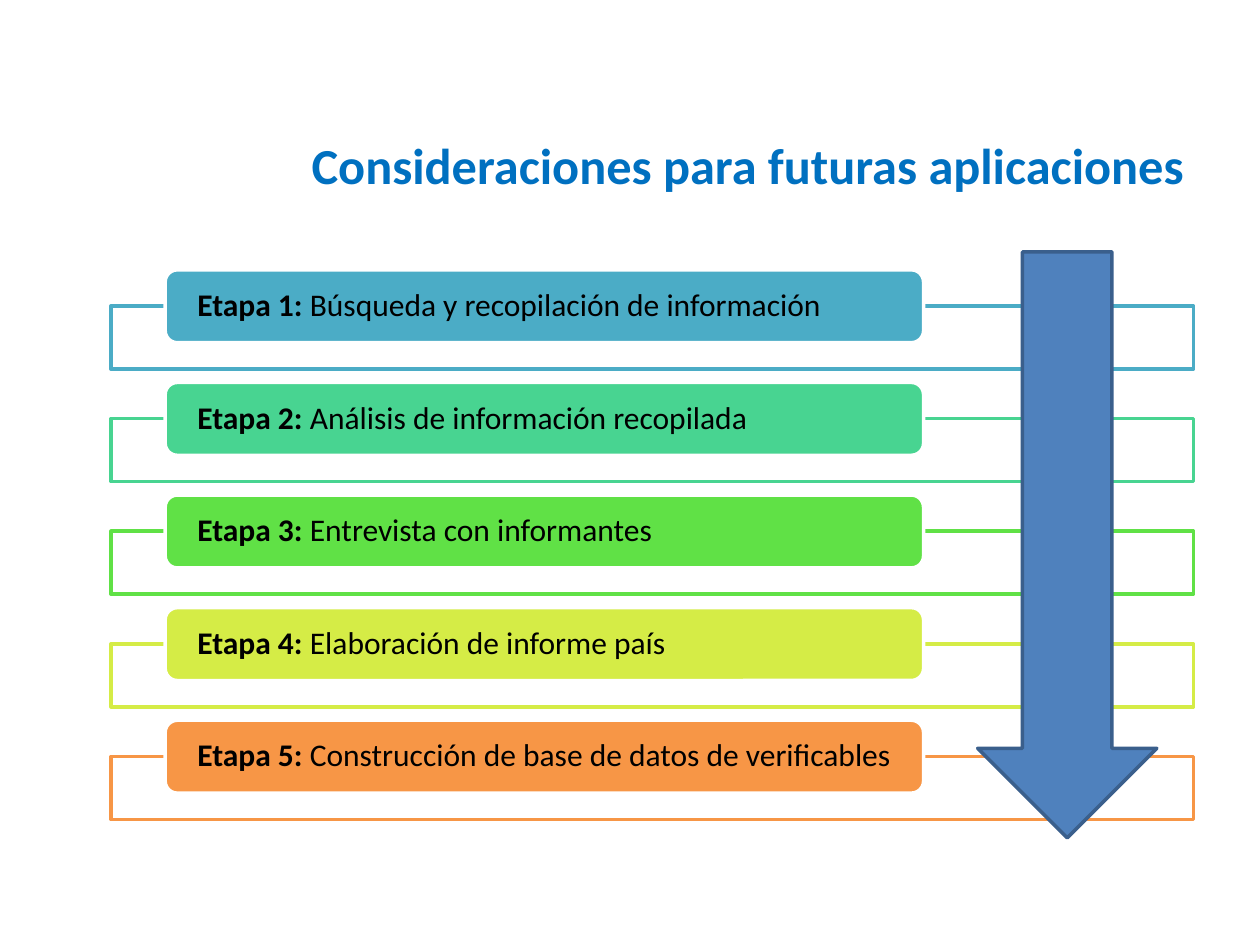
from lxml import etree
from pptx import Presentation
from pptx import util as u
from pptx.dml.color import RGBColor
from pptx.enum import shapes, text
from pptx.oxml.ns import qn


def color(value):
    return RGBColor.from_string(value)


class StageSlide:
    font = "Calibri"
    line_width = u.Pt(2)

    def __init__(self, slide):
        self.slide = slide

    def box(self, kind, bounds, fill, line, opacity=100):
        box = self.slide.shapes.add_shape(kind, *map(u.Cm, bounds))
        box.shadow.inherit = False
        box.fill.solid()
        box.fill.fore_color.rgb = color(fill)
        if opacity < 100:
            tint = box.element.spPr.find(qn("a:solidFill"))[0]
            etree.SubElement(tint, qn("a:alpha"), val=str(opacity * 1000))
        box.line.color.rgb = color(line)
        box.line.width = self.line_width
        return box

    def add_words(self, frame, runs, size, ink, align):
        frame.word_wrap = True
        frame.vertical_anchor = text.MSO_ANCHOR.MIDDLE
        paragraph = frame.paragraphs[0]
        paragraph.alignment = align
        for words, bold in runs:
            run = paragraph.add_run()
            run.text = words
            run.font.name = self.font
            run.font.size = u.Pt(size)
            run.font.bold = bold
            run.font.color.rgb = color(ink)
        return paragraph

    def title(self, words, bounds):
        heading = self.slide.shapes.add_textbox(*map(u.Cm, bounds))
        self.add_words(heading.text_frame, [(words, True)], 28.8, "0070C0",
                       text.PP_ALIGN.RIGHT)

    def stage(self, number, description, accent, top):
        self.box(shapes.MSO_SHAPE.RECTANGLE, (2.24, top + 0.73, 21.82, 1.27),
                 "FFFFFF", accent, opacity=90)
        label = self.box(shapes.MSO_SHAPE.ROUNDED_RECTANGLE,
                         (3.33, top, 15.29, 1.47), accent, "FFFFFF")
        frame = label.text_frame
        frame.margin_left = u.Cm(0.58)
        frame.margin_right = frame.margin_top = frame.margin_bottom = 0
        paragraph = self.add_words(
            frame, [(f"Etapa {number}:", True), (f" {description}", False)],
            18, "000000", text.PP_ALIGN.LEFT)
        paragraph.line_spacing = 0.9

    def down_arrow(self, bounds):
        self.box(shapes.MSO_SHAPE.DOWN_ARROW, bounds, "4F81BD", "3A5F8C")


def main():
    deck = Presentation()
    deck.slide_width, deck.slide_height = u.Cm(25.4), u.Cm(19.05)
    page = StageSlide(deck.slides.add_slide(deck.slide_layouts[6]))
    page.title("Consideraciones para futuras aplicaciones",
               (4.7, 2.34, 19.43, 1.96))

    stages = [
        ("Búsqueda y recopilación de información", "4BACC6"),
        ("Análisis de información recopilada", "48D491"),
        ("Entrevista con informantes", "60E146"),
        ("Elaboración de informe país", "D5EC46"),
        ("Construcción de base de datos de verificables", "F79646"),
    ]
    first_top, pitch = 5.44, 2.27
    for index, (description, accent) in enumerate(stages):
        page.stage(index + 1, description, accent, first_top + index * pitch)

    page.down_arrow((19.71, 5.08, 3.61, 11.81))
    deck.save("out.pptx")


if __name__ == "__main__":
    main()
